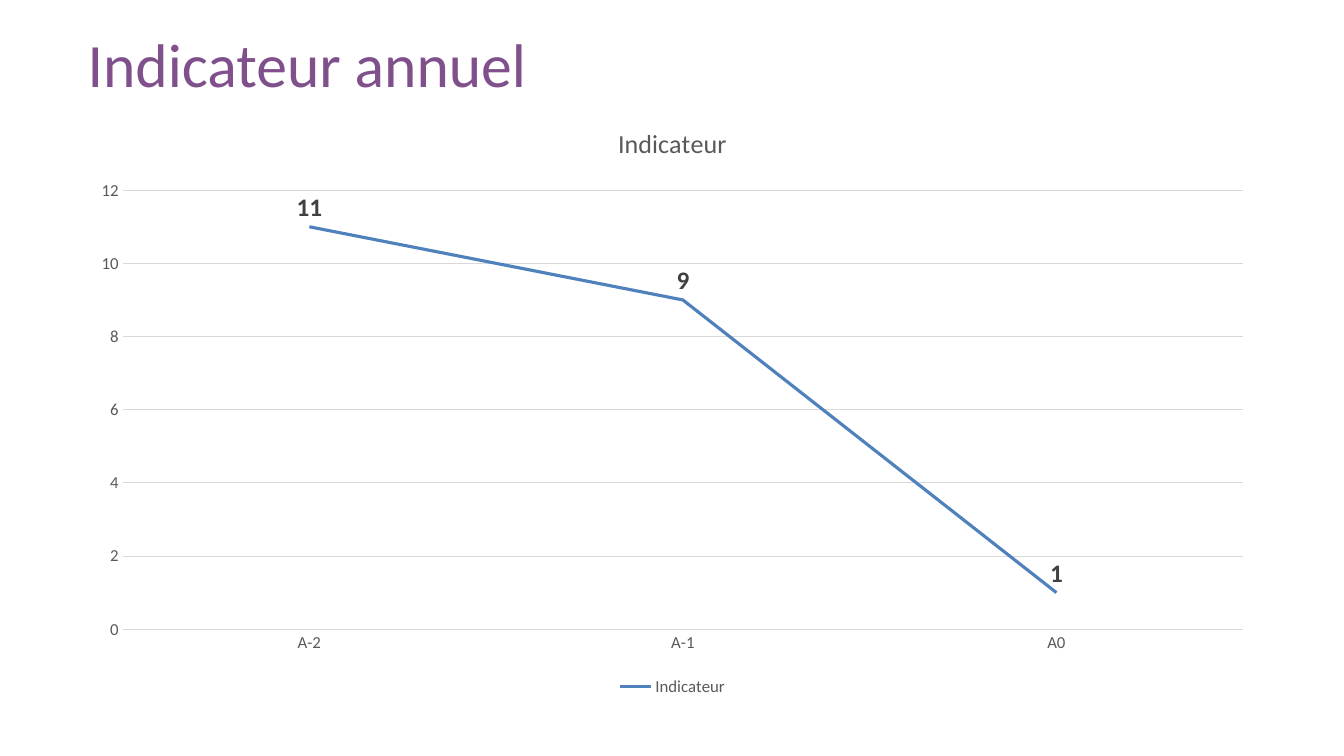
from dataclasses import dataclass
from typing import Any

from pptx import Presentation
from pptx.chart.data import CategoryChartData
from pptx.dml.color import RGBColor
from pptx.enum.chart import XL_CHART_TYPE as ChartType
from pptx.enum.chart import XL_LABEL_POSITION as LabelPosition
from pptx.enum.chart import XL_LEGEND_POSITION as LegendPosition
from pptx.enum.chart import XL_MARKER_STYLE as MarkerStyle
from pptx.enum.chart import XL_TICK_MARK as TickMark
from pptx.enum.text import MSO_ANCHOR as Anchor
from pptx.util import Cm, Pt


@dataclass(frozen=True)
class Theme:
    font: str = "Calibri"
    heading: str = "7F508B"
    muted: str = "595959"
    label: str = "404040"
    grid: str = "D9D9D9"
    series: str = "4F81BD"
    heading_size: float = 44
    chart_title_size: float = 18.6
    label_size: float = 18
    axis_size: float = 12
    grid_width: float = 0.75
    series_width: float = 2.25


@dataclass(frozen=True)
class Frame:
    left: float
    top: float
    width: float
    height: float

    def lengths(self) -> tuple[Cm, Cm, Cm, Cm]:
        return Cm(self.left), Cm(self.top), Cm(self.width), Cm(self.height)


@dataclass(frozen=True)
class YearValue:
    year: str
    value: int


THEME = Theme()
HEADING_FRAME = Frame(1.96, 0.46, 29.97, 2.49)
CHART_FRAME = Frame(1.96, 2.59, 29.97, 15.06)
YEAR_VALUES = [YearValue("A-2", 11), YearValue("A-1", 9), YearValue("A0", 1)]


def style_font(font: Any, *, size: float, color: str, bold: bool = False) -> None:
    font.name = THEME.font
    font.size = Pt(size)
    font.bold = bold
    font.color.rgb = RGBColor.from_string(color)


def style_line(line: Any, *, color: str, width: float) -> None:
    line.color.rgb = RGBColor.from_string(color)
    line.width = Pt(width)


def write_text(text_frame: Any, text: str, *, size: float, color: str, line_spacing: float = 1) -> None:
    para = text_frame.paragraphs[0]
    para.line_spacing = line_spacing
    span = para.add_run()
    span.text = text
    style_font(span.font, size=size, color=color)


def add_heading(page: Any, text: str) -> None:
    box = page.shapes.add_textbox(*HEADING_FRAME.lengths())
    box.text_frame.word_wrap = True
    box.text_frame.vertical_anchor = Anchor.MIDDLE
    write_text(box.text_frame, text, size=THEME.heading_size, color=THEME.heading, line_spacing=0.9)


def style_axis(axis: Any) -> None:
    axis.major_tick_mark = TickMark.NONE
    axis.minor_tick_mark = TickMark.NONE
    style_font(axis.tick_labels.font, size=THEME.axis_size, color=THEME.muted)


def add_indicator_chart(page: Any, name: str, year_values: list[YearValue]) -> None:
    data = CategoryChartData()
    data.categories = [item.year for item in year_values]
    data.add_series(name, [item.value for item in year_values])
    chart = page.shapes.add_chart(ChartType.LINE, *CHART_FRAME.lengths(), data).chart
    style_font(chart.font, size=THEME.axis_size, color=THEME.muted)

    chart.has_title = True
    write_text(chart.chart_title.text_frame, name, size=THEME.chart_title_size, color=THEME.muted)
    chart.chart_title.include_in_layout = False

    chart.has_legend = True
    chart.legend.position = LegendPosition.BOTTOM
    chart.legend.include_in_layout = False
    style_font(chart.legend.font, size=THEME.axis_size, color=THEME.muted)

    for axis in (chart.category_axis, chart.value_axis):
        style_axis(axis)
    value_axis = chart.value_axis
    value_axis.minimum_scale, value_axis.maximum_scale, value_axis.major_unit = 0, 12, 2
    value_axis.format.line.fill.background()
    for line in (chart.category_axis.format.line, value_axis.major_gridlines.format.line):
        style_line(line, color=THEME.grid, width=THEME.grid_width)

    plot = chart.plots[0]
    plot.vary_by_categories = False
    series = plot.series[0]
    series.smooth = False
    series.marker.style = MarkerStyle.NONE
    style_line(series.format.line, color=THEME.series, width=THEME.series_width)
    labels = series.data_labels
    labels.show_value = True
    labels.position = LabelPosition.ABOVE
    style_font(labels.font, size=THEME.label_size, color=THEME.label, bold=True)


def main() -> None:
    deck = Presentation()
    deck.slide_width, deck.slide_height = Cm(33.87), Cm(19.05)
    page = deck.slides.add_slide(deck.slide_layouts[6])
    add_heading(page, "Indicateur annuel")
    add_indicator_chart(page, "Indicateur", YEAR_VALUES)
    deck.save("out.pptx")


if __name__ == "__main__":
    main()
